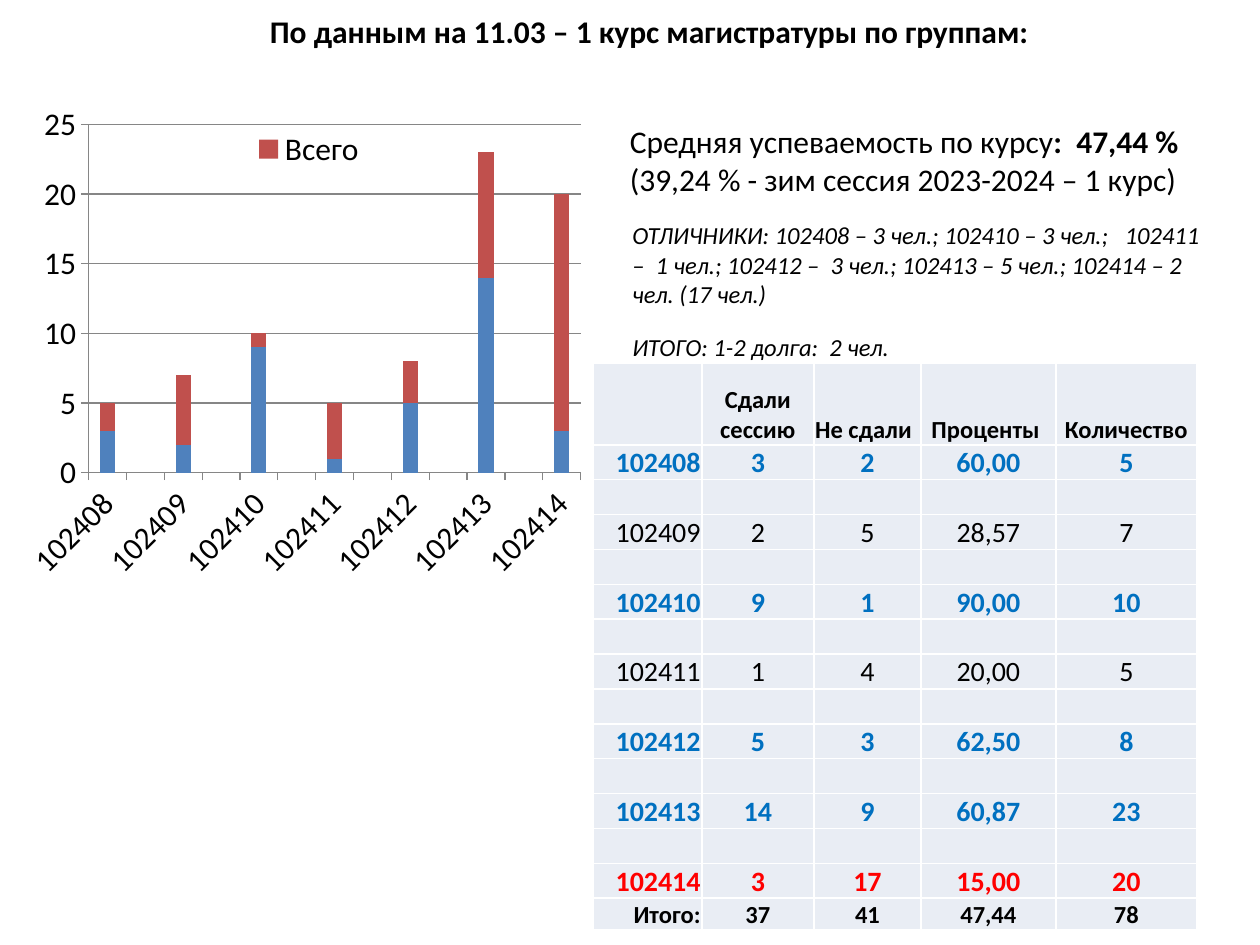
import pptx
import pptx.util
import pptx.chart.data
import pptx.dml.color
import pptx.enum.chart
import pptx.enum.text
import pptx.oxml
import lxml.etree

# Content
TITLE = "По данным на 11.03 – 1 курс магистратуры по группам:"
MEAN = [
    [("Средняя успеваемость по курсу", False), (":  47,44 %", True)],
    [("(39,24 % - зим сессия 2023-2024 – 1 курс)", False)],
]
NOTES = [
    "ОТЛИЧНИКИ: 102408 – 3 чел.; 102410 – 3 чел.;   102411 –  1 чел.; "
    "102412 –  3 чел.; 102413 – 5 чел.; 102414 – 2 чел. (17 чел.)",
    "ИТОГО: 1-2 долга:  2 чел.",
]
HEAD = ["", "Сдали сессию", "Не сдали", "Проценты ", "Количество"]
GROUPS = [  # group, passed, failed, percent, count, tone
    ("102408", 3, 2, "60,00", 5, "good"),
    ("102409", 2, 5, "28,57", 7, "text"),
    ("102410", 9, 1, "90,00", 10, "good"),
    ("102411", 1, 4, "20,00", 5, "text"),
    ("102412", 5, 3, "62,50", 8, "good"),
    ("102413", 14, 9, "60,87", 23, "good"),
    ("102414", 3, 17, "15,00", 20, "bad"),
]
TOTAL = ["Итого:", 37, 41, "47,44", 78]
SERIES = ["Сдали сессию", "Всего"]

THEME = {
    "font": "Calibri", "big": 18, "mid": 16, "small": 14,
    "text": "000000", "good": "0070C0", "bad": "FF0000",
    "cell": "E9EDF4", "edge": "FFFFFF", "axis": "868686",
    "bars": ["4F81BD", "C0504D"],
}

# Places: left, top, width, height in inches
BOX = {
    "title": (0.59, 0.05, 9.13, 0.4),
    "chart": (0.12, 0.75, 5.83, 3.95),
    "mean": (4.9, 0.92, 4.61, 0.71),
    "notes": (4.92, 1.7, 4.8, 1.36),
    "table": (4.71, 2.88, 4.8, 4.49),
}
COLS = [0.86, 0.89, 0.85, 1.07, 1.12]
TOP, BASE = 0.65, 0.25  # header and total rows

Inch, Pt = pptx.util.Inches, pptx.util.Pt
Align = pptx.enum.text.PP_ALIGN


def rgb(name):
    return pptx.dml.color.RGBColor.from_string(THEME.get(name, name))


def place(name):
    return [Inch(n) for n in BOX[name]]


def style(font, size, tone="text", bold=False, slant=False):
    font.name, font.size = THEME["font"], Pt(THEME[size])
    font.bold, font.italic = bold, slant
    font.color.rgb = rgb(tone)


def write(slide, name, lines, size, wrap=True, slant=False, align=Align.LEFT, gap=0):
    frame = slide.shapes.add_textbox(*place(name)).text_frame
    frame.word_wrap = wrap
    for i, runs in enumerate(lines):
        para = frame.add_paragraph() if i else frame.paragraphs[0]
        para.alignment = align
        para.space_before = Pt(gap if i else 0)
        style(para.font, size, bold=runs[0][1], slant=slant)
        for text, bold in runs:
            run = para.add_run()
            run.text = text
            style(run.font, size, bold=bold, slant=slant)


def layout(host, inner, **spots):
    """Give a chart part a fixed place, as shares of the chart."""
    ns = "http://schemas.openxmlformats.org/drawingml/2006/chart"
    for old in host.findall(f"{{{ns}}}layout"):
        host.remove(old)
    top = lxml.etree.Element(f"{{{ns}}}layout")
    man = lxml.etree.SubElement(top, f"{{{ns}}}manualLayout")
    rows = [("layoutTarget", "inner")] if inner else []
    rows += [("xMode", "edge"), ("yMode", "edge"), *spots.items()]
    for tag, val in rows:
        lxml.etree.SubElement(man, f"{{{ns}}}{tag}").set("val", str(val))
    return top


def draw_chart(slide):
    kinds = pptx.enum.chart
    data = pptx.chart.data.CategoryChartData()
    # A blank category stands between groups
    slots = [s for g in GROUPS for s in (g, None)][:-1]
    data.categories = [s[0] if s else "" for s in slots]
    for col, name in enumerate(SERIES, 1):
        data.add_series(name, [s[col] if s else None for s in slots])
    chart = slide.shapes.add_chart(
        kinds.XL_CHART_TYPE.COLUMN_STACKED, *place("chart"), data).chart
    style(chart.font, "big")
    chart.has_title = False
    plot = chart.plots[0]
    plot.gap_width, plot.overlap, plot.vary_by_categories = 150, 100, False
    for ser, tone in zip(plot.series, THEME["bars"]):
        ser.format.fill.solid()
        ser.format.fill.fore_color.rgb = rgb(tone)
    cat, val = chart.category_axis, chart.value_axis
    val.minimum_scale, val.maximum_scale, val.major_unit = 0, 25, 5
    val.has_major_gridlines = True
    for line in (cat.format.line, val.format.line, val.major_gridlines.format.line):
        line.color.rgb, line.width = rgb("axis"), Pt(0.75)
    for axis in (cat, val):
        axis.major_tick_mark = kinds.XL_TICK_MARK.OUTSIDE
        style(axis.tick_labels.font, "big")
    body = cat._element.find(".//{*}txPr/{*}bodyPr")
    body.set("rot", "-2700000")
    body.set("vert", "horz")

    # Legend over the plot, without its first entry
    chart.has_legend = True
    key = chart.legend
    key.position = kinds.XL_LEGEND_POSITION.RIGHT
    key.include_in_layout = True
    style(key.font, "big")
    entry = pptx.oxml.parse_xml(
        '<c:legendEntry xmlns:c="http://schemas.openxmlformats.org/drawingml/2006/chart">'
        '<c:idx val="0"/><c:delete val="1"/></c:legendEntry>')
    spot = layout(key._element, False, x=0.3, y=0.06, w=0.2, h=0.1)
    key._element.find("{*}legendPos").addnext(entry)
    entry.addnext(spot)
    area = chart._chartSpace.find(".//{*}plotArea")
    area.insert(0, layout(area, True, x=0.1, y=0.06, w=0.67, h=0.7))


def edge(cell):
    props = cell._tc.get_or_add_tcPr()
    for i, side in enumerate(("lnL", "lnR", "lnT", "lnB")):
        props.insert(i, pptx.oxml.parse_xml(
            f'<a:{side} xmlns:a="http://schemas.openxmlformats.org/drawingml/2006/main" '
            f'w="12700"><a:solidFill><a:srgbClr val="{THEME["edge"]}"/></a:solidFill></a:{side}>'))


def fill_cell(cell, text, align, size, tone, bold):
    cell.fill.solid()
    cell.fill.fore_color.rgb = rgb("cell")
    cell.margin_left = cell.margin_right = cell.margin_top = Inch(0.01)
    cell.margin_bottom = 0
    cell.vertical_anchor = pptx.enum.text.MSO_ANCHOR.BOTTOM
    para = cell.text_frame.paragraphs[0]
    para.alignment = align
    style(para.font, size, tone, bold)
    if text != "":
        run = para.add_run()
        run.text = str(text)
        style(run.font, size, tone, bold)
    else:
        # An empty cell keeps the row's type size
        para._p.append(pptx.oxml.parse_xml(
            '<a:endParaRPr xmlns:a="http://schemas.openxmlformats.org/drawingml/2006/main" '
            f'sz="{THEME[size] * 100}"/>'))
    edge(cell)


def draw_table(slide):
    rows = [(HEAD, "small", "text", True)]
    for i, (*vals, tone) in enumerate(GROUPS):
        if i:
            rows.append(([""] * len(COLS), "mid", "text", False))
        rows.append((vals, "mid", tone, tone != "text"))
    rows.append((TOTAL, "small", "text", True))
    table = slide.shapes.add_table(len(rows), len(COLS), *place("table")).table
    table.first_row = table.horz_banding = False
    for col, wide in zip(table.columns, COLS):
        col.width = Inch(wide)
    step = (BOX["table"][3] - TOP - BASE) / (len(rows) - 2)
    highs = [TOP] + [step] * (len(rows) - 2) + [BASE]
    for r, (vals, size, tone, bold) in enumerate(rows):
        table.rows[r].height = Inch(highs[r])
        for c, text in enumerate(vals):
            align = Align.CENTER if c else Align.RIGHT
            if text == "Не сдали":
                align = Align.LEFT
            fill_cell(table.cell(r, c), text, align, size, tone, bold)


def main():
    deck = pptx.Presentation()
    deck.slide_width, deck.slide_height = Inch(10), Inch(7.5)
    slide = deck.slides.add_slide(deck.slide_layouts[6])
    draw_chart(slide)
    write(slide, "title", [[(TITLE, True)]], "big", align=Align.CENTER)
    write(slide, "notes", [[(t, False)] for t in NOTES], "small", slant=True, gap=13.5)
    write(slide, "mean", MEAN, "big", wrap=False)
    draw_table(slide)
    deck.save("out.pptx")


if __name__ == "__main__":
    main()
